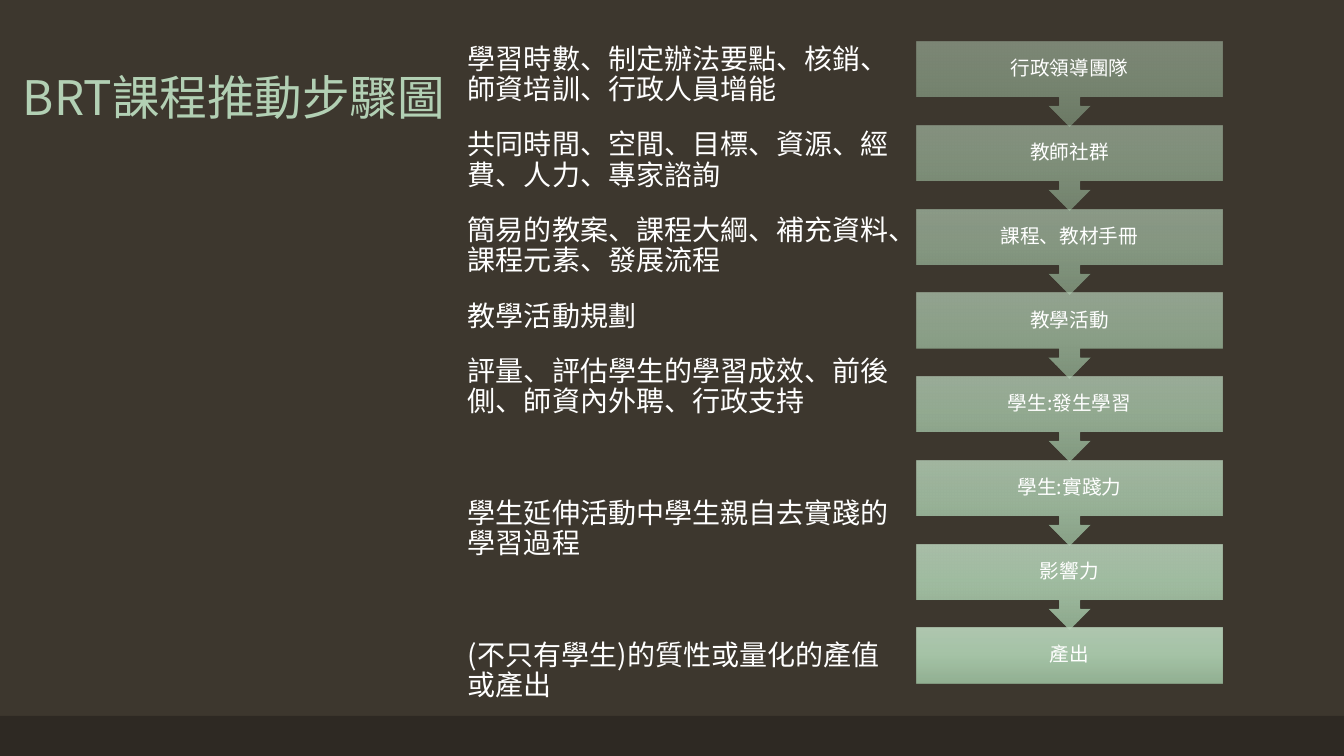
from lxml import etree
from pptx import Presentation
from pptx.dml.color import RGBColor
from pptx.enum.shapes import MSO_SHAPE
from pptx.enum.text import MSO_ANCHOR, PP_ALIGN
from pptx.oxml import parse_xml
from pptx.oxml.ns import nsdecls, qn
from pptx.util import Pt

RECT = MSO_SHAPE.RECTANGLE
STEP_ARROW = MSO_SHAPE.DOWN_ARROW_CALLOUT
MIDDLE, BOTTOM, TOP = MSO_ANCHOR.MIDDLE, MSO_ANCHOR.BOTTOM, MSO_ANCHOR.TOP
CENTER, LEFT = PP_ALIGN.CENTER, PP_ALIGN.LEFT

SLIDE_W, SLIDE_H = 1344, 756
EMU_PER_PX = 12192000 / SLIDE_W
FONT = "Noto Sans CJK TC"
COLORS = {
    "background": "3D372E",
    "footer": "2E2923",
    "title": "B2D0B4",
    "text": "FFFFFF",
    "step_top": "BCD6BE",
    "step_middle": "B0D2B3",
    "step_bottom": "9BBC9D",
}

TITLE = "BRT課程推動步驟圖"
STEPS = ["行政領導團隊", "教師社群", "課程、教材手冊", "教學活動",
         "學生:發生學習", "學生:實踐力", "影響力", "產出"]
# Each note with the space before it in points
NOTES = [
    ("學習時數、制定辦法要點、核銷、師資培訓、行政人員增能", 0),
    ("共同時間、空間、目標、資源、經費、人力、專家諮詢", 18),
    ("簡易的教案、課程大綱、補充資料、課程元素、發展流程", 18),
    ("教學活動規劃", 18),
    ("評量、評估學生的學習成效、前後側、師資內外聘、行政支持", 18),
    ("學生延伸活動中學生親自去實踐的學習過程", 58),
    ("(不只有學生)的質性或量化的產值或產出", 58),
]

STEP_LEFT, STEP_WIDTH = 917, 305
FIRST_STEP_TOP, LAST_STEP_TOP = 42, 628
STEP_HEIGHT, LAST_STEP_HEIGHT = 85, 55
FIRST_OPACITY, LAST_OPACITY = 50, 90


def px(length):
    return round(length * EMU_PER_PX)


def rgb(name):
    return RGBColor.from_string(COLORS[name])


def format_paragraph(paragraph, size, color, align=LEFT, space_before=0):
    paragraph.alignment = align
    paragraph.line_spacing = 0.9
    paragraph.space_before = Pt(space_before)
    paragraph._p.get_or_add_pPr().set("hangingPunct", "1")
    for run in paragraph.runs:
        run.font.size = Pt(size)
        run.font.name = FONT
        run.font.color.rgb = rgb(color)
        latin = run._r.rPr.find(qn("a:latin"))
        east_asian = etree.Element(qn("a:ea"), typeface=FONT)
        latin.addnext(east_asian)


def add_text(slide, left, top, width, height, notes, size, color, anchor):
    frame = slide.shapes.add_textbox(px(left), px(top), px(width), px(height)).text_frame
    frame.word_wrap = True
    frame.vertical_anchor = anchor
    frame.text = "\n".join(text for text, _ in notes)
    for paragraph, (_, space_before) in zip(frame.paragraphs, notes):
        format_paragraph(paragraph, size, color, space_before=space_before)


def add_block(slide, kind, left, top, width, height):
    block = slide.shapes.add_shape(kind, px(left), px(top), px(width), px(height))
    block.shadow.inherit = False
    block.line.fill.background()
    return block


def fill_gradient(block, opacity):
    """Fill with the translucent step gradient, top to bottom; opacity in percent."""
    stops = "".join(
        f'<a:gs pos="{position}"><a:srgbClr val="{COLORS[name]}">'
        f'<a:alpha val="{round(opacity * 1000)}"/></a:srgbClr></a:gs>'
        for position, name in ((0, "step_top"), (50000, "step_middle"), (100000, "step_bottom")))
    gradient = parse_xml(
        f'<a:gradFill {nsdecls("a")} rotWithShape="1"><a:gsLst>{stops}</a:gsLst>'
        '<a:lin ang="5400000" scaled="0"/></a:gradFill>')
    block._element.spPr.find(qn("a:prstGeom")).addnext(gradient)


def add_step(slide, index, label):
    last = len(STEPS) - 1
    progress = index / last
    top = FIRST_STEP_TOP + progress * (LAST_STEP_TOP - FIRST_STEP_TOP)
    kind, height = (RECT, LAST_STEP_HEIGHT) if index == last else (STEP_ARROW, STEP_HEIGHT)
    step = add_block(slide, kind, STEP_LEFT, top, STEP_WIDTH, height)
    fill_gradient(step, FIRST_OPACITY + progress * (LAST_OPACITY - FIRST_OPACITY))
    frame = step.text_frame
    frame.word_wrap = True
    frame.vertical_anchor = MIDDLE
    frame.text = label
    format_paragraph(frame.paragraphs[0], 14, "text", CENTER)


def main():
    presentation = Presentation()
    presentation.slide_width, presentation.slide_height = px(SLIDE_W), px(SLIDE_H)
    slide = presentation.slides.add_slide(presentation.slide_layouts[6])
    slide.background.fill.solid()
    slide.background.fill.fore_color.rgb = rgb("background")

    footer = add_block(slide, RECT, 0, 716, SLIDE_W, 40)
    footer.fill.solid()
    footer.fill.fore_color.rgb = rgb("footer")

    add_text(slide, 13, 5, 1159, 126, [(TITLE, 0)], 34, "title", BOTTOM)
    for index, label in enumerate(STEPS):
        add_step(slide, index, label)
    add_text(slide, 458, 40, 453, 647, NOTES, 20, "text", TOP)

    presentation.save("out.pptx")


if __name__ == "__main__":
    main()
